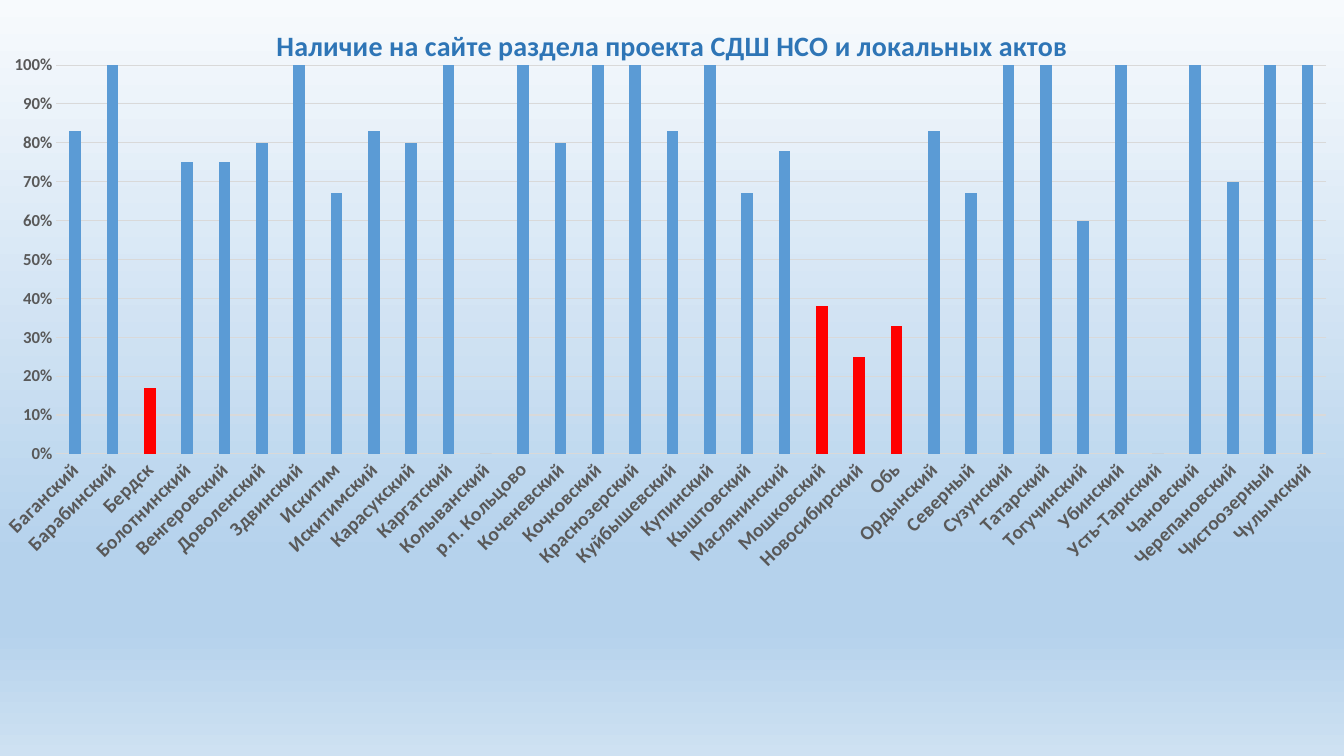
from lxml import etree
from pptx import Presentation
from pptx import util as u
from pptx.chart import data as chart_data
from pptx.dml.color import RGBColor
from pptx.enum import chart as chart_enum
from pptx.oxml.ns import qn

FONT = "Calibri"
SLIDE_WIDTH, SLIDE_HEIGHT = u.Cm(33.87), u.Cm(19.05)
COLORS = {
    "title": "2E75B6",
    "bar": "5B9BD5",
    "low": "FF0000",
    "label": "595959",
    "grid": "D9D9D9",
}
BACKGROUND_STOPS = [(0, "F7FAFD"), (74, "B5D2EC"), (83, "B5D2EC"), (100, "CEE1F2")]
LOW_LIMIT = 0.5

TITLE = "Наличие на сайте раздела проекта СДШ НСО и локальных актов"
DISTRICTS = {
    "Баганский": 0.83, "Барабинский": 1, "Бердск": 0.17, "Болотнинский": 0.75,
    "Венгеровский": 0.75, "Доволенский": 0.8, "Здвинский": 1, "Искитим": 0.67,
    "Искитимский": 0.83, "Карасукский": 0.8, "Каргатский": 1, "Колыванский": 0,
    "р.п. Кольцово": 1, "Коченевский": 0.8, "Кочковский": 1, "Краснозерский": 1,
    "Куйбышевский": 0.83, "Купинский": 1, "Кыштовский": 0.67, "Маслянинский": 0.78,
    "Мошковский": 0.38, "Новосибирский": 0.25, "Обь": 0.33, "Ордынский": 0.83,
    "Северный": 0.67, "Сузунский": 1, "Татарский": 1, "Тогучинский": 0.6,
    "Убинский": 1, "Усть-Таркский": 0, "Чановский": 1, "Черепановский": 0.7,
    "Чистоозерный": 1, "Чулымский": 1,
}


def color(name):
    return RGBColor.from_string(COLORS[name])


def format_font(font, size, name, bold=True):
    font.name = FONT
    font.size = u.Pt(size)
    font.bold = bold
    font.color.rgb = color(name)


def format_line(line, name):
    line.width = u.Pt(0.75)
    line.color.rgb = color(name)


def set_background(slide, stops):
    fill = slide.background.fill
    fill.gradient()
    fill.gradient_angle = 270
    stop_list = slide.element.find(".//" + qn("a:gsLst"))
    for stop in list(stop_list):
        stop_list.remove(stop)
    for position, value in stops:
        stop = etree.SubElement(stop_list, qn("a:gs"), pos=str(position * 1000))
        etree.SubElement(stop, qn("a:srgbClr"), val=value)


def set_layout(parent, index, left, top, width=None, height=None):
    """Place a part of the full-slide chart; lengths become fractions."""
    for old in parent.findall(qn("c:layout")):
        parent.remove(old)
    values = {"xMode": "edge", "yMode": "edge",
              "x": left / SLIDE_WIDTH, "y": top / SLIDE_HEIGHT}
    if width and height:
        values = {"layoutTarget": "inner", **values,
                  "w": width / SLIDE_WIDTH, "h": height / SLIDE_HEIGHT}
    layout = etree.Element(qn("c:layout"))
    manual = etree.SubElement(layout, qn("c:manualLayout"))
    for tag, value in values.items():
        etree.SubElement(manual, qn("c:" + tag), val=str(value))
    parent.insert(index, layout)


def add_title(chart, content, left, top):
    chart.has_title = True
    title = chart.chart_title
    title.include_in_layout = False
    run = title.text_frame.paragraphs[0].add_run()
    run.text = content
    format_font(run.font, 20, "title")
    set_layout(chart.element.find(".//" + qn("c:title")), 1, left, top)


def format_axis(axis, size):
    axis.major_tick_mark = chart_enum.XL_TICK_MARK.NONE
    axis.minor_tick_mark = chart_enum.XL_TICK_MARK.NONE
    format_font(axis.tick_labels.font, size, "label")


def format_axes(chart):
    districts, shares = chart.category_axis, chart.value_axis
    format_axis(districts, 14)
    format_line(districts.format.line, "grid")
    # Slanted district names
    label_text = chart.element.find(".//" + qn("c:catAx")).find(qn("c:txPr"))
    body = label_text.find(qn("a:bodyPr"))
    body.set("rot", "-2700000")
    body.set("vert", "horz")

    format_axis(shares, 12)
    shares.minimum_scale, shares.maximum_scale = 0, 1
    shares.major_unit = 0.1
    shares.tick_labels.number_format = "0%"
    shares.tick_labels.number_format_is_linked = False
    shares.format.line.fill.background()
    shares.has_major_gridlines = True
    format_line(shares.major_gridlines.format.line, "grid")


def format_bars(plot):
    plot.gap_width = 219
    plot.overlap = -27
    plot.vary_by_categories = False
    series = plot.series[0]
    series.format.fill.solid()
    series.format.fill.fore_color.rgb = color("bar")
    # Low, non-zero shares stand out in red
    for index, value in enumerate(series.values):
        if 0 < value < LOW_LIMIT:
            fill = series.points[index].format.fill
            fill.solid()
            fill.fore_color.rgb = color("low")


def add_column_chart(slide, values):
    data = chart_data.CategoryChartData(number_format="0%")
    data.categories = list(values)
    data.add_series("Доля", list(values.values()))
    chart = slide.shapes.add_chart(
        chart_enum.XL_CHART_TYPE.COLUMN_CLUSTERED, 0, 0,
        SLIDE_WIDTH, SLIDE_HEIGHT, data).chart
    chart.has_legend = False
    chart.font.name = FONT
    chart.font.size = u.Pt(10)
    format_axes(chart)
    format_bars(chart.plots[0])
    set_layout(chart.element.find(".//" + qn("c:plotArea")), 0,
               u.Cm(1.42), u.Cm(1.64), u.Cm(32), u.Cm(9.8))
    return chart


def main():
    presentation = Presentation()
    presentation.slide_width = SLIDE_WIDTH
    presentation.slide_height = SLIDE_HEIGHT
    slide = presentation.slides.add_slide(presentation.slide_layouts[6])

    # Background
    set_background(slide, BACKGROUND_STOPS)

    # Chart over the whole slide, title above the top gridline
    chart = add_column_chart(slide, DISTRICTS)
    add_title(chart, TITLE, u.Cm(6.84), u.Cm(0.53))

    presentation.save("out.pptx")


if __name__ == "__main__":
    main()
